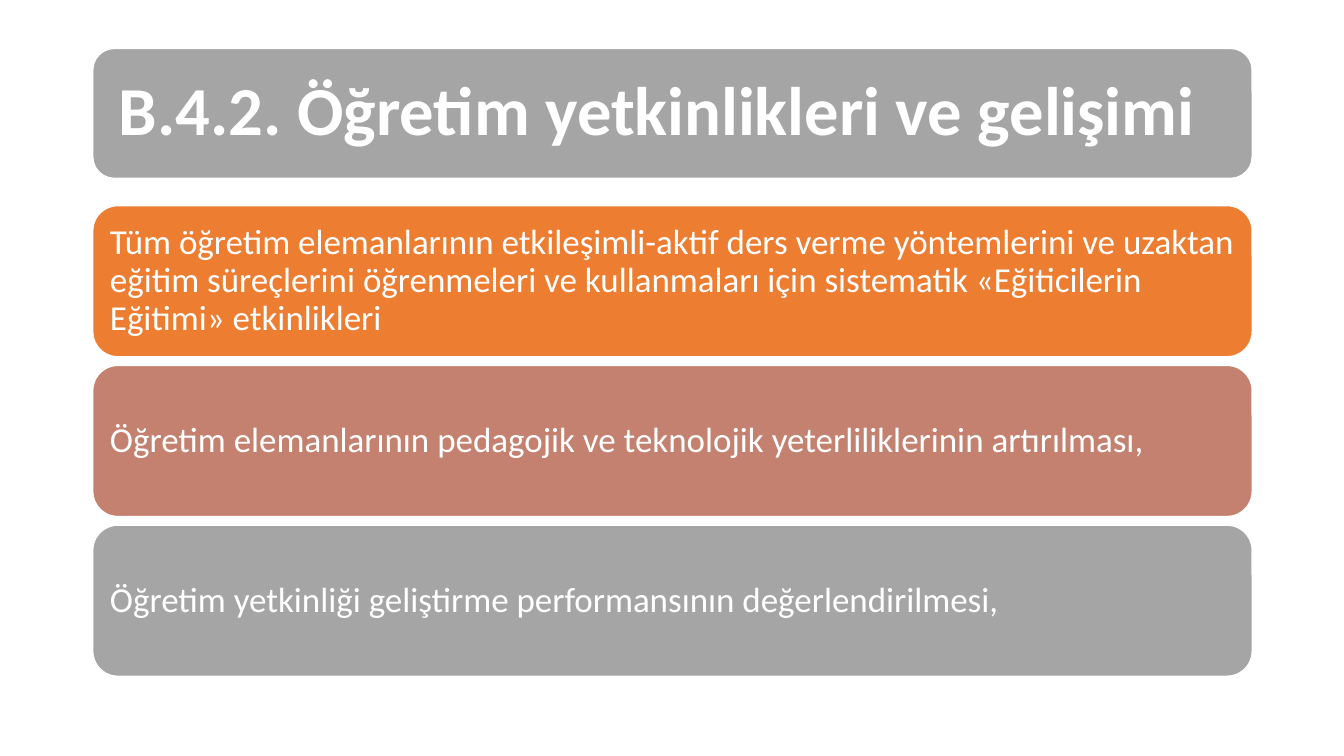
from dataclasses import dataclass

from pptx import Presentation
from pptx.dml.color import RGBColor
from pptx.enum.shapes import MSO_SHAPE
from pptx.enum.text import MSO_ANCHOR, MSO_AUTO_SIZE, PP_ALIGN
from pptx.shapes.autoshape import Shape
from pptx.slide import Slide
from pptx.text.text import TextFrame
from pptx.util import Inches, Pt

ROUNDED = MSO_SHAPE.ROUNDED_RECTANGLE
MIDDLE = MSO_ANCHOR.MIDDLE
LEFT = PP_ALIGN.LEFT
NO_AUTOFIT = MSO_AUTO_SIZE.NONE
TITLE_ONLY_LAYOUT = 5

FONT = "Calibri"
WHITE, GRAY, ORANGE, ROSE = "FFFFFF", "A5A5A5", "ED7D31", "C48170"

PANEL_LEFT, PANEL_WIDTH = 0.92, 11.5
CARD_TOP, CARD_HEIGHT, CARD_STEP = 2.04, 1.5, 1.585


@dataclass
class Card:
    text: str
    color: str


TITLE = "B.4.2. Öğretim yetkinlikleri ve gelişimi"
CARDS = [
    Card("Tüm öğretim elemanlarının etkileşimli-aktif ders verme yöntemlerini ve "
         "uzaktan eğitim süreçlerini öğrenmeleri ve kullanmaları için sistematik "
         "«Eğiticilerin Eğitimi» etkinlikleri", ORANGE),
    Card("Öğretim elemanlarının pedagojik ve teknolojik yeterliliklerinin artırılması,", ROSE),
    Card("Öğretim yetkinliği geliştirme performansının değerlendirilmesi,", GRAY),
]


def rgb(color: str) -> RGBColor:
    return RGBColor.from_string(color)


def add_panel(slide: Slide, top: float, height: float, color: str) -> Shape:
    panel = slide.shapes.add_shape(
        ROUNDED, Inches(PANEL_LEFT), Inches(top), Inches(PANEL_WIDTH), Inches(height))
    panel.shadow.inherit = False
    panel.fill.solid()
    panel.fill.fore_color.rgb = rgb(color)
    panel.line.color.rgb = rgb(WHITE)
    panel.line.width = Pt(1)
    return panel


def write_text(frame: TextFrame, text: str, size: float, inset: float,
               bold: bool = False) -> None:
    frame.word_wrap = True
    frame.auto_size = NO_AUTOFIT
    frame.vertical_anchor = MIDDLE
    frame.margin_left = frame.margin_right = Inches(inset)
    frame.margin_top = frame.margin_bottom = Inches(inset)
    paragraph = frame.paragraphs[0]
    paragraph.alignment = LEFT
    paragraph.line_spacing = 0.9
    run = paragraph.add_run()
    run.text = text
    run.font.name = FONT
    run.font.size = Pt(size)
    run.font.bold = bold
    run.font.color.rgb = rgb(WHITE)


def add_title(slide: Slide) -> None:
    panel = add_panel(slide, 0.48, 1.29, GRAY)
    title = slide.shapes.title
    title.left, title.top = Inches(0.98), Inches(0.54)
    title.width, title.height = Inches(11.37), Inches(1.16)
    write_text(title.text_frame, TITLE, 49, 0.2, bold=True)
    # Keep the panel behind the title
    title.element.addprevious(panel.element)


def main() -> None:
    presentation = Presentation()
    presentation.slide_width = Inches(13.33)
    presentation.slide_height = Inches(7.5)
    slide = presentation.slides.add_slide(presentation.slide_layouts[TITLE_ONLY_LAYOUT])

    # Heading
    add_title(slide)

    # Stacked cards
    for index, card in enumerate(CARDS):
        panel = add_panel(slide, CARD_TOP + index * CARD_STEP, CARD_HEIGHT, card.color)
        write_text(panel.text_frame, card.text, 25, 0.1)

    presentation.save("out.pptx")


if __name__ == "__main__":
    main()
